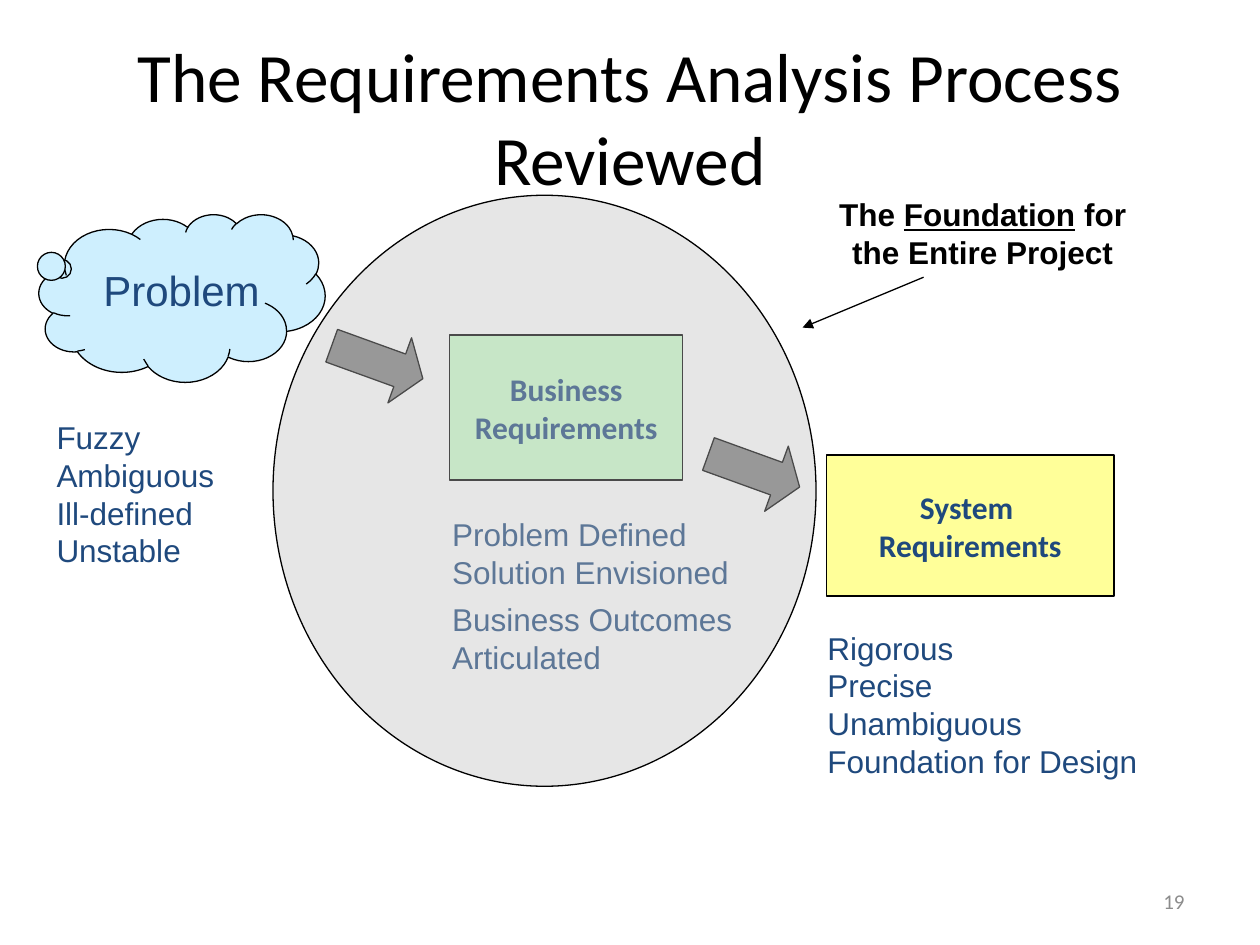
from lxml import etree
from pptx import Presentation
from pptx.dml.color import RGBColor
from pptx.enum.shapes import MSO_CONNECTOR, MSO_SHAPE
from pptx.enum.text import MSO_ANCHOR, MSO_AUTO_SIZE, PP_ALIGN
from pptx.oxml.ns import qn
from pptx.util import Pt

LEFT, CENTER, RIGHT = PP_ALIGN.LEFT, PP_ALIGN.CENTER, PP_ALIGN.RIGHT
TOP, MIDDLE = MSO_ANCHOR.TOP, MSO_ANCHOR.MIDDLE
RECT, OVAL = MSO_SHAPE.RECTANGLE, MSO_SHAPE.OVAL
CLOUD, ARROW = MSO_SHAPE.CLOUD_CALLOUT, MSO_SHAPE.RIGHT_ARROW

THEME = {
    "black": "000000", "navy": "1F497D", "muted": "8C8C8C",
    "cloud": "CEEFFE", "arrow": "808080", "business": "CCFFCC",
    "system": "FFFF99", "scope": "C0C0C0",
    "heading": "Calibri", "body": "Arial",
    "title_size": 39.6, "problem_size": 24, "text_size": 18, "number_size": 12,
}


def color(name):
    return RGBColor.from_string(THEME[name])


def write(sp, lines, size="text_size", font="body", ink="navy", align=LEFT,
          anchor=TOP, bold=False, wrap=False):
    """Each line is a list of (text, underlined) runs or a plain string."""
    tf = sp.text_frame
    frame = {"word_wrap": wrap, "auto_size": MSO_AUTO_SIZE.NONE,
             "vertical_anchor": anchor}
    for key, value in frame.items():
        setattr(tf, key, value)
    for i, line in enumerate(lines):
        p = tf.add_paragraph() if i else tf.paragraphs[0]
        p.alignment = align
        for text, underlined in [(line, False)] if isinstance(line, str) else line:
            r = p.add_run()
            r.text = text
            style = {"name": THEME[font], "size": Pt(THEME[size]),
                     "bold": bold, "underline": underlined}
            for key, value in style.items():
                setattr(r.font, key, value)
            r.font.color.rgb = color(ink)
    return tf


def add_shape(kind, box, fill, adjustments=(), rotation=0):
    sp = s.shapes.add_shape(kind, *map(Pt, box))
    sp.shadow.inherit = False
    sp.fill.solid()
    sp.fill.fore_color.rgb = color(fill)
    sp.line.color.rgb = color("black")
    sp.line.width = Pt(0.75)
    sp.rotation = rotation
    for i, value in enumerate(adjustments):
        sp.adjustments[i] = value
    return sp


prs = Presentation()
prs.slide_width, prs.slide_height = Pt(720), Pt(540)
s = prs.slides.add_slide(prs.slide_layouts[5])

# Title
title = s.shapes.title
title.left, title.top, title.width, title.height = map(Pt, (36, 21.6, 648, 90))
write(title, ["The Requirements Analysis Process Reviewed"], "title_size",
      "heading", "black", CENTER, MIDDLE, wrap=True)

# Slide number
number = s.shapes.add_textbox(*map(Pt, (516, 500.5, 168, 28.8)))
write(number, ["19"], "number_size", "heading", "muted", RIGHT, MIDDLE, wrap=True)

# Problem cloud
add_shape(CLOUD, (22.3, 122.4, 163.5, 95.8), "cloud", (-0.414, -0.171))
problem = s.shapes.add_textbox(*map(Pt, (52, 147.6, 103.7, 36)))
write(problem, ["Problem"], "problem_size")

# Requirement boxes
for name, box, fill in (("System ", (472.3, 260, 164.2, 80.6), "system"),
                        ("Business", (257, 191.5, 133.2, 82.8), "business")):
    sp = add_shape(RECT, box, fill)
    write(sp, [name, "Requirements"], font="heading", align=CENTER,
          anchor=MIDDLE, bold=True)

# Arrows from stage to stage
for left, top in ((187.9, 187.2), (403.2, 249.1)):
    add_shape(ARROW, (left, top, 55.4, 39.6), "arrow", (0.5, 0.354), 19.9)

# Qualities of each stage
qualities = (
    ((25.2, 235.4, 104.4, 93.6),
     ["Fuzzy", "Ambiguous", "Ill-defined", "Unstable"]),
    ((465.8, 355.7, 191.5, 93.6),
     ["Rigorous", "Precise", "Unambiguous", "Foundation for Design"]),
    ((251.3, 290.9, 174.2, 100),
     ["Problem Defined", "Solution Envisioned", "Business Outcomes", "Articulated"]),
)
for box, lines in qualities:
    tf = write(s.shapes.add_textbox(*map(Pt, box)), lines)
tf.paragraphs[1].space_after = Pt(5.4)

# Translucent scope circle over the business stage
scope = add_shape(OVAL, (156, 111.6, 310.3, 337.7), "scope")
rgb = scope.fill._xPr.find(qn("a:solidFill")).find(qn("a:srgbClr"))
etree.SubElement(rgb, qn("a:alpha")).set("val", "39000")

# Foundation note and its pointer
note = s.shapes.add_textbox(*map(Pt, (465.8, 108, 191.5, 50.4)))
write(note, [[("The ", False), ("Foundation", True), (" for the Entire Project", False)]],
      ink="black", align=CENTER, bold=True, wrap=True)
pointer = s.shapes.add_connector(MSO_CONNECTOR.STRAIGHT,
                                 *map(Pt, (527.8, 158.4, 458.6, 187.2)))
pointer.line.color.rgb = color("black")
pointer.line.width = Pt(0.75)
etree.SubElement(pointer.line._get_or_add_ln(), qn("a:tailEnd")).set("type", "triangle")
etree.SubElement(pointer._element.spPr, qn("a:effectLst"))

prs.save("out.pptx")
